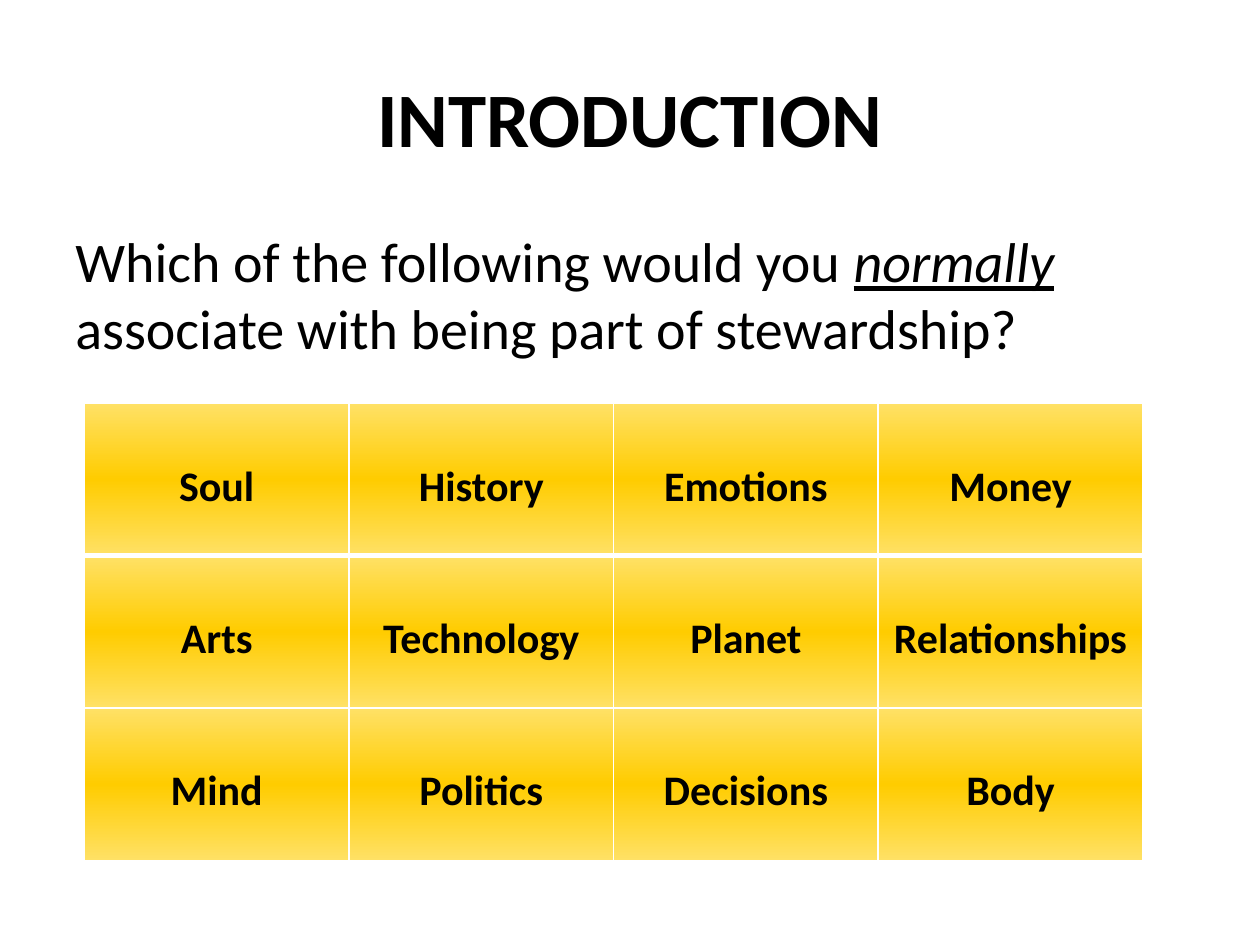
from lxml import etree
from pptx import Presentation
from pptx.dml.color import RGBColor
from pptx.enum.text import MSO_ANCHOR as ANCHOR, PP_ALIGN as ALIGN
from pptx.oxml import parse_xml
from pptx.oxml.ns import nsdecls
from pptx.util import Inches, Pt

COLORS = {"text": "000000", "border": "FFFFFF", "edge": "FFE166", "middle": "FFCC00"}
FONT = "Calibri"
TOPICS = [
    ["Soul", "History", "Emotions", "Money"],
    ["Arts", "Technology", "Planet", "Relationships"],
    ["Mind", "Politics", "Decisions", "Body"],
]
QUESTION = [
    ("Which of the following would you ", False),
    ("normally ", True),
    ("associate with being part of stewardship?", False),
]


def set_font(p, size, bold=False):
    p.font.name = FONT
    p.font.size = Pt(size)
    p.font.bold = bold
    p.font.color.rgb = RGBColor.from_string(COLORS["text"])


def style_cell(cell, bottom_width):
    """Add white borders and a vertical gradient that is darkest in the middle."""
    tcPr = cell._tc.get_or_add_tcPr()
    for side, width in (("L", 1), ("R", 1), ("T", 1), ("B", bottom_width)):
        tcPr.append(parse_xml(
            f'<a:ln{side} {nsdecls("a")} w="{Pt(width)}"><a:solidFill>'
            f'<a:srgbClr val="{COLORS["border"]}"/></a:solidFill></a:ln{side}>'))
    stops = "".join(
        f'<a:gs pos="{pos * 1000}"><a:srgbClr val="{COLORS[name]}"/></a:gs>'
        for pos, name in ((0, "edge"), (50, "middle"), (100, "edge")))
    tcPr.append(parse_xml(
        f'<a:gradFill {nsdecls("a")} rotWithShape="1"><a:gsLst>{stops}</a:gsLst>'
        '<a:lin ang="5400000" scaled="0"/></a:gradFill>'))


prs = Presentation()
prs.slide_width, prs.slide_height = Inches(10), Inches(7.5)
s = prs.slides.add_slide(prs.slide_layouts[6])

# Title
tf = s.shapes.add_textbox(Inches(0.5), Inches(0.3), Inches(9), Inches(1.25)).text_frame
tf.word_wrap = True
tf.vertical_anchor = ANCHOR.MIDDLE
p = tf.paragraphs[0]
p.text = "INTRODUCTION"
p.alignment = ALIGN.CENTER
set_font(p, 44, bold=True)

# Question
tf = s.shapes.add_textbox(Inches(0.5), Inches(1.75), Inches(9), Inches(1.25)).text_frame
tf.word_wrap = True
p = tf.paragraphs[0]
set_font(p, 32)
for text, stressed in QUESTION:
    r = p.add_run()
    r.text = text
    if stressed:
        r.font.italic = r.font.underline = True

# Topics
table = s.shapes.add_table(len(TOPICS), len(TOPICS[0]), Inches(0.67), Inches(3.2),
                           Inches(8.4), Inches(3.63)).table
for column in table.columns:
    column.width = Inches(2.1)
for row in table.rows:
    row.height = Inches(1.21)
for i, topics in enumerate(TOPICS):
    for j, topic in enumerate(topics):
        cell = table.cell(i, j)
        cell.margin_top = Inches(0.46)
        p = cell.text_frame.paragraphs[0]
        p.text = topic
        p.alignment = ALIGN.CENTER
        set_font(p, 24, bold=True)
        style_cell(cell, bottom_width=3 if i == 0 else 1)

prs.save("out.pptx")
